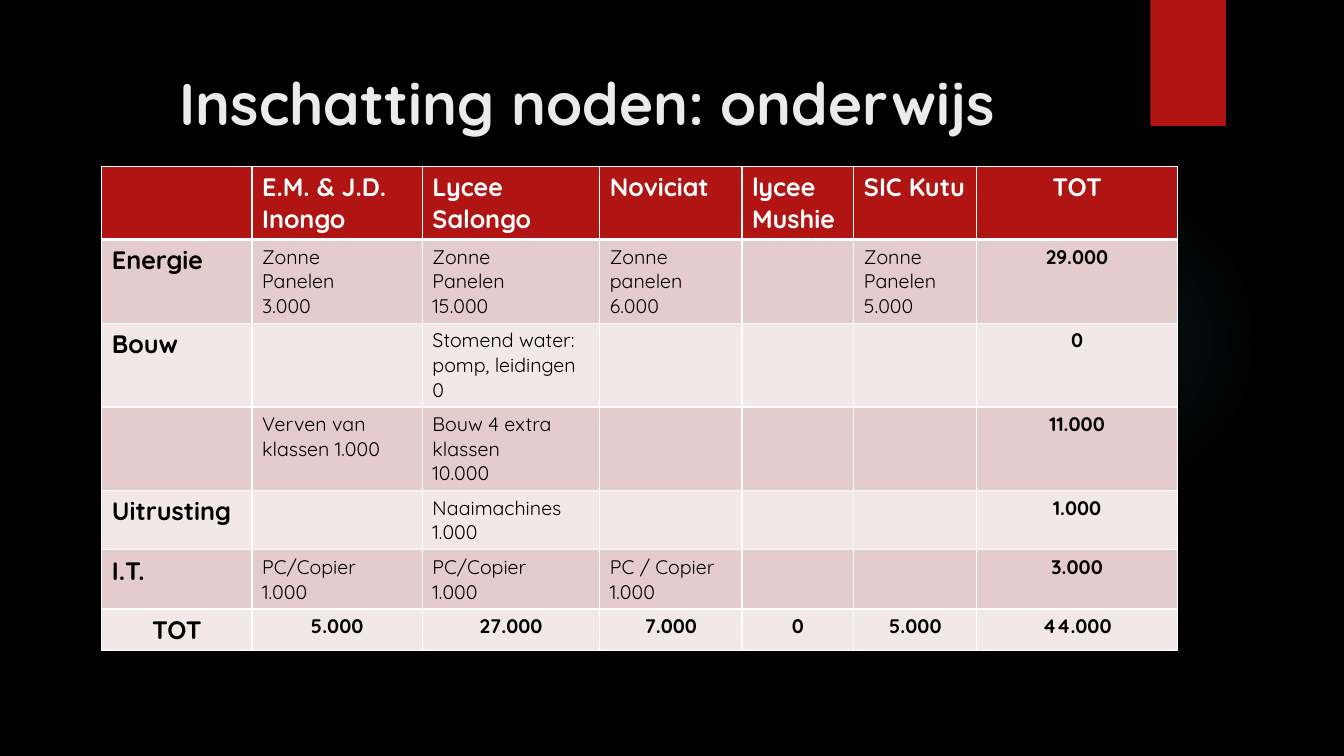
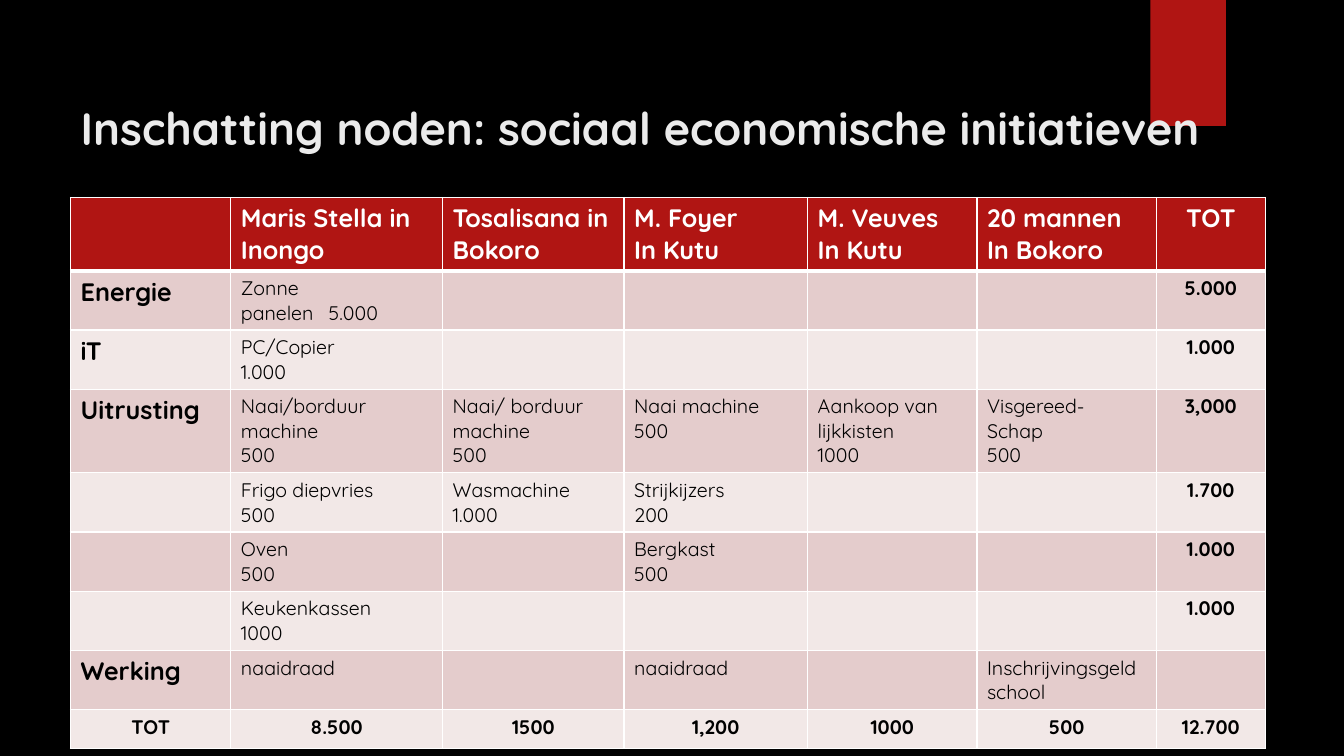
from dataclasses import dataclass

from lxml.etree import SubElement
from pptx import Presentation
from pptx.dml.color import RGBColor
from pptx.enum.shapes import MSO_SHAPE
from pptx.enum.text import MSO_ANCHOR, MSO_AUTO_SIZE, PP_ALIGN
from pptx.oxml import parse_xml
from pptx.oxml.ns import nsdecls, qn
from pptx.util import Inches, Pt

FONT = "Quicksand"
BLACK = RGBColor(0x00, 0x00, 0x00)
WHITE = RGBColor(0xFF, 0xFF, 0xFF)
RED = RGBColor(0xB0, 0x15, 0x13)
TITLE_GREY = RGBColor(0xEB, 0xEB, 0xEB)
GLOW = RGBColor(0x50, 0xB9, 0xC1)
BANDS = (RGBColor(0xE4, 0xCC, 0xCC), RGBColor(0xF2, 0xE8, 0xE7))
LABEL_SIZE, BODY_SIZE = 18, 14
TAB_STOP = Inches(0.87)

Box = tuple[float, float, float, float]


@dataclass(frozen=True)
class NeedsSlide:
    title: str
    title_box: Box
    title_size: float
    left: float
    top: float
    widths: list[float]
    heights: list[float]
    rows: list[list[str]]
    total_label_size: int


NEEDS = [
    NeedsSlide(
        title="Inschatting noden: onderwijs",
        title_box=(1.68, 0.56, 10.41, 0.91),
        title_size=42,
        left=1.01,
        top=1.65,
        widths=[1.49, 1.69, 1.76, 1.41, 1.11, 1.22, 1.99],
        heights=[0.72, 0.83, 0.83, 0.83, 0.58, 0.58, 0.41],
        rows=[
            ["", "E.M. & J.D. Inongo", "Lycee Salongo", "Noviciat", "lycee Mushie", "SIC Kutu", "TOT"],
            ["Energie", "Zonne\nPanelen\n3.000", "Zonne\nPanelen\n15.000",
             "Zonne\npanelen\n6.000", "", "Zonne\nPanelen\n5.000", "29.000"],
            ["Bouw", "", "Stomend water: pomp, leidingen 0", "", "", "", "0"],
            ["", "Verven van klassen 1.000", "Bouw 4 extra klassen\n10.000", "", "", "", "11.000"],
            ["Uitrusting", "", "Naaimachines\n1.000", "", "", "", "1.000"],
            ["I.T.", "PC/Copier\n1.000", "PC/Copier\n1.000", "PC / Copier\n1.000", "", "", "3.000"],
            ["TOT", "5.000", "27.000", "7.000", "0", "5.000", "44.000"],
        ],
        total_label_size=LABEL_SIZE,
    ),
    NeedsSlide(
        title="Inschatting noden: sociaal economische initiatieven",
        title_box=(0.7, 0.88, 11.86, 0.77),
        title_size=32.4,
        left=0.7,
        top=1.96,
        widths=[1.59, 2.1, 1.8, 1.82, 1.68, 1.78, 1.08],
        heights=[0.72, 0.58, 0.58, 0.83, 0.58, 0.58, 0.58, 0.58, 0.39],
        rows=[
            ["", "Maris Stella in Inongo", "Tosalisana in Bokoro", "M. Foyer\nIn Kutu",
             "M. Veuves\nIn Kutu", "20 mannen\nIn Bokoro", "TOT"],
            ["Energie", "Zonne\npanelen\t5.000", "", "", "", "", "5.000"],
            ["iT", "PC/Copier\n1.000", "", "", "", "", "1.000"],
            ["Uitrusting", "Naai/borduur machine\n500", "Naai/ borduur machine\n500",
             "Naai machine\n500", "Aankoop van lijkkisten\n1000", "Visgereed-\nSchap\n500", "3,000"],
            ["", "Frigo diepvries\n500", "Wasmachine\n1.000", "Strijkijzers\n200", "", "", "1.700"],
            ["", "Oven\n500", "", "Bergkast\n500", "", "", "1.000"],
            ["", "Keukenkassen\n1000", "", "", "", "", "1.000"],
            ["Werking", "naaidraad", "", "naaidraad", "", "Inschrijvingsgeld school", ""],
            ["TOT", "8.500", "1500", "1,200", "1000", "500", "12.700"],
        ],
        total_label_size=BODY_SIZE,
    ),
]


def write_text(tf, text: str, *, size: float, color: RGBColor = BLACK,
               bold: bool = False, align=PP_ALIGN.LEFT) -> None:
    """Write one paragraph per line of text; a tab gets a tab stop."""
    for i, line in enumerate(text.split("\n")):
        p = tf.add_paragraph() if i else tf.paragraphs[0]
        p.alignment = align
        if "\t" in line:
            tabs = SubElement(p._p.get_or_add_pPr(), qn("a:tabLst"))
            SubElement(tabs, qn("a:tab"), pos=str(TAB_STOP), algn="l")
        r = p.add_run()
        r.text = line
        r.font.name = FONT
        r.font.size = Pt(size)
        r.font.bold = bold
        r.font.color.rgb = color


def set_borders(cell, top: float, bottom: float) -> None:
    tc_pr = cell._tc.get_or_add_tcPr()
    for side, width in (("L", 1), ("R", 1), ("T", top), ("B", bottom)):
        ln = SubElement(tc_pr, qn(f"a:ln{side}"), w=str(Pt(width)))
        fill = SubElement(ln, qn("a:solidFill"))
        SubElement(fill, qn("a:srgbClr"), val=str(WHITE))


def cell_format(row: int, col: int, needs: NeedsSlide) -> dict:
    is_header, is_total = row == 0, row == len(needs.rows) - 1
    is_label, is_sum = col == 0, col == len(needs.widths) - 1
    size = LABEL_SIZE if is_header or is_label else BODY_SIZE
    if is_total and is_label:
        size = needs.total_label_size
    return {
        "size": size,
        "color": WHITE if is_header else BLACK,
        "bold": is_header or is_total or is_label or is_sum,
        "align": PP_ALIGN.CENTER if is_total or is_sum else PP_ALIGN.LEFT,
    }


def add_needs_table(s, needs: NeedsSlide) -> None:
    frame = s.shapes.add_table(
        len(needs.rows), len(needs.widths), Inches(needs.left), Inches(needs.top),
        Inches(sum(needs.widths)), Inches(sum(needs.heights)))
    table = frame.table
    for column, width in zip(table.columns, needs.widths):
        column.width = Inches(width)
    for row, (texts, height) in enumerate(zip(needs.rows, needs.heights)):
        table.rows[row].height = Inches(height)
        for col, text in enumerate(texts):
            cell = table.cell(row, col)
            set_borders(cell, top=3 if row == 1 else 1, bottom=3 if row == 0 else 1)
            cell.fill.solid()
            cell.fill.fore_color.rgb = BANDS[(row - 1) % 2] if row else RED
            if text:
                write_text(cell.text_frame, text, **cell_format(row, col, needs))


def add_plain_shape(s, kind: MSO_SHAPE, box: Box):
    sp = s.shapes.add_shape(kind, *map(Inches, box))
    sp.shadow.inherit = False
    sp.line.fill.background()
    return sp


def decorate_layout(layout, s) -> None:
    """Give the layout its background, glow and ribbon, drawn on s and moved over."""
    layout.background.fill.solid()
    layout.background.fill.fore_color.rgb = BLACK

    glow = add_plain_shape(s, MSO_SHAPE.OVAL, (9.41, 1.83, 3.08, 3.08))
    glow.fill.background()
    stops = "".join(
        f'<a:gs pos="{pos * 1000}"><a:srgbClr val="{GLOW}">'
        f'<a:alpha val="{alpha * 1000}"/></a:srgbClr></a:gs>'
        for pos, alpha in ((0, 7), (36, 6), (69, 0), (100, 0)))
    gradient = parse_xml(
        f'<a:gradFill {nsdecls("a")} rotWithShape="1"><a:gsLst>{stops}</a:gsLst>'
        '<a:path path="circle"><a:fillToRect l="50000" t="50000" r="50000" b="50000"/>'
        '</a:path></a:gradFill>')
    sp_pr = glow.element.spPr
    sp_pr.replace(sp_pr.find(qn("a:noFill")), gradient)

    ribbon = add_plain_shape(s, MSO_SHAPE.RECTANGLE, (11.41, 0, 0.75, 1.25))
    ribbon.fill.solid()
    ribbon.fill.fore_color.rgb = RED

    for sp in (glow, ribbon):
        layout.shapes.element.append(sp.element)


def add_title(s, needs: NeedsSlide) -> None:
    sp = s.shapes.title
    sp.left, sp.top, sp.width, sp.height = map(Inches, needs.title_box)
    tf = sp.text_frame
    tf.word_wrap = True
    tf.auto_size = MSO_AUTO_SIZE.NONE
    tf.vertical_anchor = MSO_ANCHOR.MIDDLE
    write_text(tf, needs.title, size=needs.title_size, color=TITLE_GREY, bold=True)


def main() -> None:
    prs = Presentation()
    prs.slide_width, prs.slide_height = Inches(13.33), Inches(7.5)
    layout = prs.slide_layouts.get_by_name("Title Only")
    for i, needs in enumerate(NEEDS):
        s = prs.slides.add_slide(layout)
        if i == 0:
            decorate_layout(layout, s)
        add_title(s, needs)
        add_needs_table(s, needs)
    prs.save("out.pptx")


if __name__ == "__main__":
    main()
